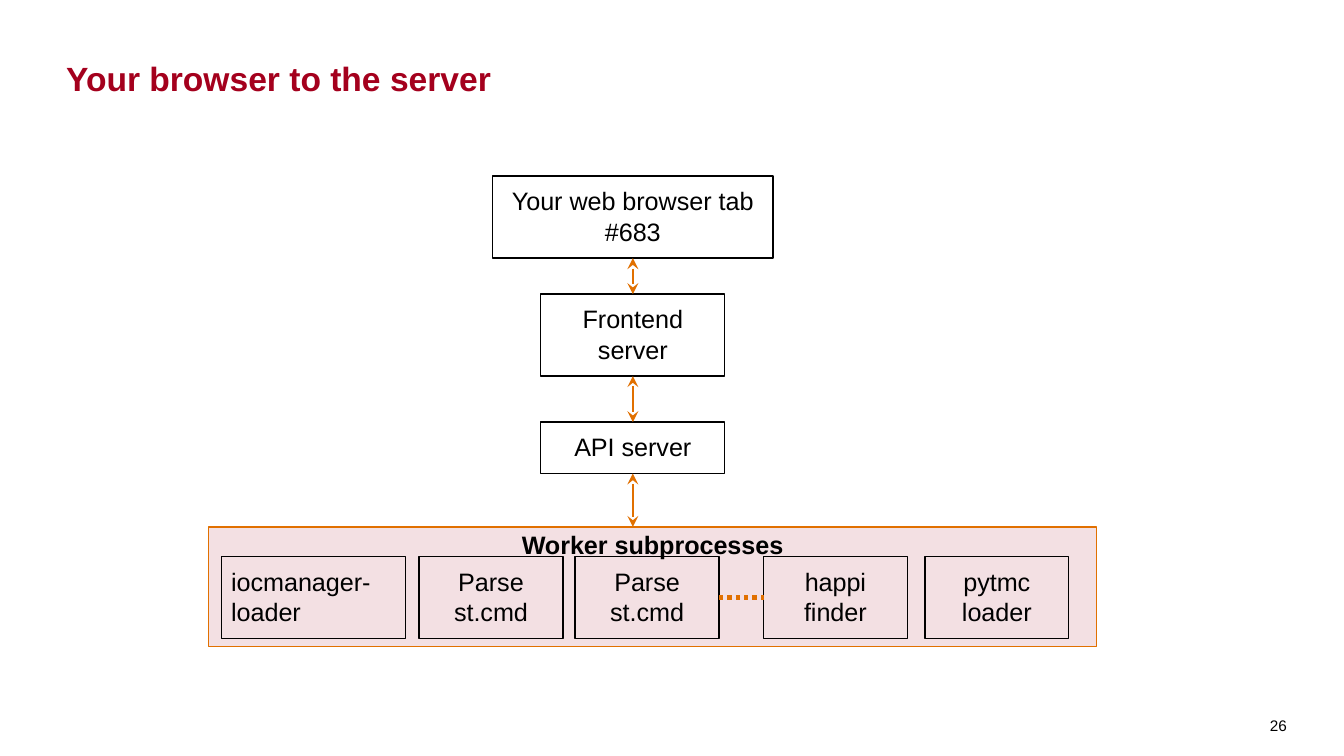
"""Build a slide tracing a request from the browser to the worker processes."""
import lxml.etree
import pptx
import pptx.dml.color
import pptx.enum.dml
import pptx.enum.shapes
import pptx.enum.text
import pptx.oxml.ns
import pptx.util

Cm = pptx.util.Cm
Pt = pptx.util.Pt
ALIGN = pptx.enum.text.PP_ALIGN
ANCHOR = pptx.enum.text.MSO_ANCHOR

RED, ORANGE, BLACK = "A4001D", "E17000", "000000"
TITLE = "Your browser to the server"
PAGE = "26"
CHAIN = [
    ("Your web browser tab #683", 3.33, 5.3, 1.55),
    ("Frontend server", 5.56, 3.48, 1.55),
    ("API server", 7.98, 3.48, 0.97),
]
PANEL = ("Worker subprocesses", 3.94, 9.96, 16.79, 2.26)
WORKERS = [
    ("iocmanager-loader", 4.19, 3.48, ALIGN.LEFT),
    ("Parse st.cmd", 7.92, 2.72, ALIGN.CENTER),
    ("Parse st.cmd", 10.87, 2.72, ALIGN.CENTER),
    ("happi finder", 14.43, 2.72, ALIGN.CENTER),
    ("pytmc loader", 17.48, 2.72, ALIGN.CENTER),
]
MID, ROW, TALL = 11.96, 10.52, 1.55


def paint(color, code):
    color.rgb = pptx.dml.color.RGBColor.from_string(code)


def write(shape, text, size, code, align, anchor, pads, bold=False):
    frame = shape.text_frame
    frame.word_wrap = True
    frame.auto_size = pptx.enum.text.MSO_AUTO_SIZE.NONE
    frame.vertical_anchor = anchor
    frame.margin_left = frame.margin_right = Cm(pads[0])
    frame.margin_top = frame.margin_bottom = Cm(pads[1])
    para = frame.paragraphs[0]
    para.alignment = align
    run = para.add_run()
    run.text = text
    run.font.name = "Arial"
    run.font.size = Pt(size)
    run.font.bold = bold
    paint(run.font.color, code)


def place(shape, *sides):
    shape.left, shape.top, shape.width, shape.height = map(Cm, sides)


def box(slide, text, sides, edge=BLACK, align=ALIGN.CENTER, pad=0.18, bold=False):
    kind = pptx.enum.shapes.MSO_SHAPE.RECTANGLE
    shape = slide.shapes.add_shape(kind, *map(Cm, sides))
    shape.shadow.inherit = False
    shape.fill.background()
    paint(shape.line.color, edge)
    shape.line.width = Pt(0.75)
    write(shape, text, 13.5, BLACK, align, ANCHOR.TOP, (0.18, pad), bold)
    return shape


def add(parent, tag, **attrs):
    lxml.etree.SubElement(parent, pptx.oxml.ns.qn("a:" + tag), attrs)


def tint(shape, code, share):
    shape.fill.solid()
    paint(shape.fill.fore_color, code)
    fill = shape._element.spPr.find(pptx.oxml.ns.qn("a:solidFill"))
    add(fill[0], "alpha", val=str(share * 1000))


def link(slide, width, ends=(0, 0, 0, 0)):
    kind = pptx.enum.shapes.MSO_CONNECTOR.STRAIGHT
    line = slide.shapes.add_connector(kind, *map(Cm, ends))
    paint(line.line.color, ORANGE)
    line.line.width = Pt(width)
    add(line._element.spPr, "effectLst")
    return line


def tips(line):
    edge = line._element.spPr.find(pptx.oxml.ns.qn("a:ln"))
    for tag in ("headEnd", "tailEnd"):
        add(edge, tag, type="stealth")


def main():
    deck = pptx.Presentation()
    deck.slide_width, deck.slide_height = Cm(25.4), Cm(14.29)
    slide = deck.slides.add_slide(deck.slide_layouts[5])

    title = slide.shapes.title
    place(title, 1.25, 0.28, 22.5, 1.57)
    write(title, TITLE, 18, RED, ALIGN.LEFT, ANCHOR.BOTTOM, (0, 0), True)
    page = slide.shapes.add_textbox(Cm(23.8), Cm(13.16), Cm(0.89), Cm(1.12))
    write(page, PAGE, 8.2, BLACK, ALIGN.LEFT, ANCHOR.MIDDLE, (0.2, 0.14))

    name, *sides = PANEL
    panel = box(slide, name, sides, ORANGE, pad=0.04, bold=True)
    tint(panel, RED, 12)
    cells = [box(slide, text, (left, ROW, wide, TALL), align=align)
             for text, left, wide, align in WORKERS]
    dots = link(slide, 2.25)
    dots.begin_connect(cells[2], 3)
    dots.end_connect(cells[3], 1)
    dots.line.dash_style = pptx.enum.dml.MSO_LINE.ROUND_DOT

    steps = [box(slide, text, (MID - wide / 2, top, wide, high))
             for text, top, wide, high in CHAIN]
    for upper, lower in zip(steps, steps[1:]):
        line = link(slide, 0.75)
        line.begin_connect(upper, 2)
        line.end_connect(lower, 0)
        tips(line)
    last = link(slide, 0.75, (MID, CHAIN[-1][1] + CHAIN[-1][3], MID, PANEL[2]))
    last.begin_connect(steps[-1], 2)
    tips(last)

    deck.save("out.pptx")


if __name__ == "__main__":
    main()
